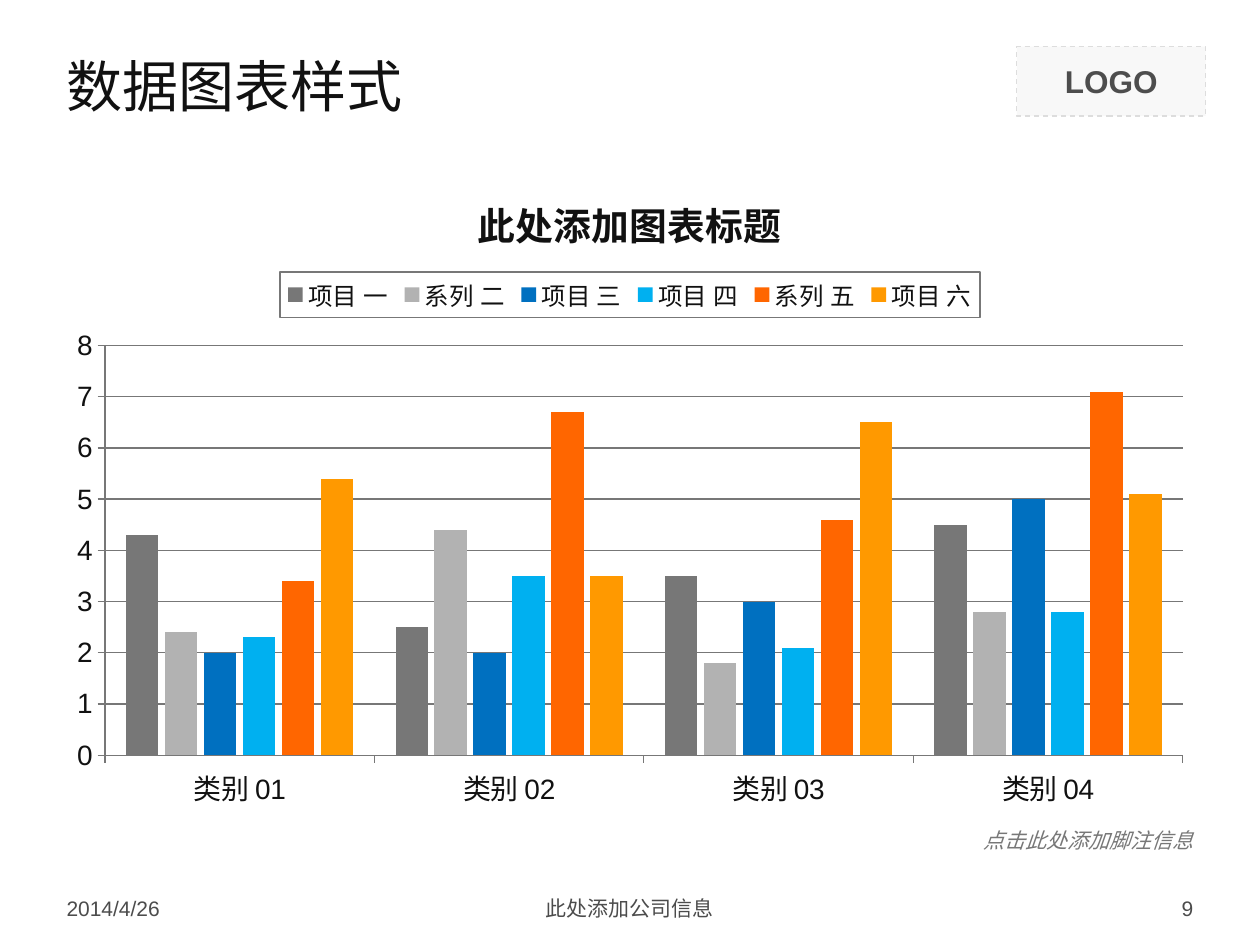
from dataclasses import dataclass

from lxml import etree
from pptx import Presentation
from pptx.chart.data import CategoryChartData
from pptx.dml.color import RGBColor
from pptx.enum.chart import XL_CHART_TYPE, XL_LEGEND_POSITION, XL_TICK_MARK
from pptx.enum.dml import MSO_LINE
from pptx.enum.shapes import MSO_SHAPE
from pptx.enum.text import MSO_ANCHOR, MSO_AUTO_SIZE, PP_ALIGN
from pptx.oxml import parse_xml
from pptx.oxml.ns import nsdecls, qn
from pptx.util import Inches, Pt

LEFT, CENTER, RIGHT = PP_ALIGN.LEFT, PP_ALIGN.CENTER, PP_ALIGN.RIGHT
TOP, MIDDLE = MSO_ANCHOR.TOP, MSO_ANCHOR.MIDDLE
COLUMNS = XL_CHART_TYPE.COLUMN_CLUSTERED
LEGEND_TOP = XL_LEGEND_POSITION.TOP
TICK_OUT = XL_TICK_MARK.OUTSIDE
TICK_NONE = XL_TICK_MARK.NONE
RECTANGLE = MSO_SHAPE.RECTANGLE
DASH = MSO_LINE.DASH
GROW, FIXED = MSO_AUTO_SIZE.SHAPE_TO_FIT_TEXT, MSO_AUTO_SIZE.NONE

GRID_COLUMNS, GRID_ROWS = 100, 75
MARGIN = 4.3
CONTENT = GRID_COLUMNS - 2 * MARGIN


@dataclass(frozen=True)
class Theme:
    ink: str = "111111"
    rule: str = "777777"
    footer: str = "4C4C4C"
    badge_text: str = "4D4D4D"
    badge_fill: str = "F8F8F8"
    badge_line: str = "DDDDDD"
    series: tuple = ("777777", "B2B2B2", "0070C0", "00B0F0", "FF6600", "FF9900")
    heading_font: str = "Montserrat"
    body_font: str = "Arial"
    heading: float = 32
    chart_title: float = 21.6
    chart: float = 18
    axis: float = 16
    legend: float = 14
    small: float = 12
    hairline: float = 0.75


def rgb(value):
    return RGBColor.from_string(value)


def style_font(font, size, color, face, bold=False, italic=False):
    font.size, font.name = Pt(size), face
    font.bold, font.italic = bold, italic
    font.color.rgb = rgb(color)


def write(frame, text, align=LEFT, anchor=MIDDLE, wrap=True, fit=FIXED, **font):
    frame.auto_size = fit
    frame.word_wrap = wrap
    frame.vertical_anchor = anchor
    paragraph = frame.paragraphs[0]
    paragraph.alignment = align
    run = paragraph.add_run()
    run.text = text
    style_font(run.font, **font)


class Page:
    def __init__(self, deck, theme):
        self.theme = theme
        self.cell_width = deck.slide_width / GRID_COLUMNS
        self.cell_height = deck.slide_height / GRID_ROWS
        self.slide = deck.slides.add_slide(deck.slide_layouts[5])

    def area(self, column, row, columns, rows):
        return (int(column * self.cell_width), int(row * self.cell_height),
                int(columns * self.cell_width), int(rows * self.cell_height))

    def title(self, text, *cells):
        heading = self.slide.shapes.title
        heading.left, heading.top, heading.width, heading.height = self.area(*cells)
        write(heading.text_frame, text, size=self.theme.heading,
              color=self.theme.ink, face=self.theme.heading_font)

    def badge(self, text, *cells):
        theme = self.theme
        badge = self.slide.shapes.add_shape(RECTANGLE, *self.area(*cells))
        badge.shadow.inherit = False
        badge.fill.solid()
        badge.fill.fore_color.rgb = rgb(theme.badge_fill)
        badge.line.color.rgb = rgb(theme.badge_line)
        badge.line.width = Pt(theme.hairline)
        badge.line.dash_style = DASH
        write(badge.text_frame, text, align=CENTER, size=theme.chart,
              color=theme.badge_text, face=theme.body_font, bold=True)

    def label(self, text, *cells, color, **style):
        box = self.slide.shapes.add_textbox(*self.area(*cells))
        write(box.text_frame, text, size=self.theme.small, color=color,
              face=self.theme.body_font, **style)

    def rule(self, line):
        line.color.rgb = rgb(self.theme.rule)
        line.width = Pt(self.theme.hairline)

    def axis(self, axis):
        theme = self.theme
        axis.major_tick_mark, axis.minor_tick_mark = TICK_OUT, TICK_NONE
        self.rule(axis.format.line)
        style_font(axis.tick_labels.font, theme.axis, theme.ink, theme.body_font)

    def legend(self, chart):
        theme = self.theme
        chart.has_legend = True
        legend = chart.legend
        legend.position = LEGEND_TOP
        legend.include_in_layout = False
        style_font(legend.font, theme.legend, theme.ink, theme.body_font)
        border = parse_xml(f'<c:spPr {nsdecls("c", "a")}/>')
        line = etree.SubElement(border, qn("a:ln"), w=str(Pt(theme.hairline)))
        fill = etree.SubElement(line, qn("a:solidFill"))
        etree.SubElement(fill, qn("a:srgbClr"), val=theme.rule)
        chart.element.find(".//" + qn("c:legend")).find(qn("c:txPr")).addprevious(border)

    def column_chart(self, heading, categories, results, *cells):
        theme = self.theme
        data = CategoryChartData()
        data.categories = categories
        for name, values in results.items():
            data.add_series(name, values)
        chart = self.slide.shapes.add_chart(COLUMNS, *self.area(*cells), data).chart
        style_font(chart.font, theme.chart, theme.ink, theme.body_font)
        chart.has_title = True
        write(chart.chart_title.text_frame, heading, align=CENTER,
              size=theme.chart_title, color=theme.ink, face=theme.body_font, bold=True)
        chart.chart_title.include_in_layout = False
        self.legend(chart)
        self.axis(chart.category_axis)
        scale = chart.value_axis
        self.axis(scale)
        scale.minimum_scale, scale.maximum_scale, scale.major_unit = 0, 8, 1
        scale.has_major_gridlines = True
        self.rule(scale.major_gridlines.format.line)
        plot = chart.plots[0]
        plot.gap_width, plot.overlap, plot.vary_by_categories = 130, -20, False
        for series, color in zip(plot.series, theme.series):
            series.format.fill.solid()
            series.format.fill.fore_color.rgb = rgb(color)


def main():
    deck = Presentation()
    deck.slide_width, deck.slide_height = Inches(10), Inches(7.5)
    theme = Theme()
    page = Page(deck, theme)
    right = GRID_COLUMNS - MARGIN

    page.badge("LOGO", right - 15, 3.7, 15, 5.5)
    page.title("数据图表样式", MARGIN, 2.8, CONTENT, 7.9)
    page.column_chart(
        "此处添加图表标题",
        [f"类别 {number:02}" for number in range(1, 5)],
        {
            "项目 一": (4.3, 2.5, 3.5, 4.5),
            "系列 二": (2.4, 4.4, 1.8, 2.8),
            "项目 三": (2, 2, 3, 5),
            "项目 四": (2.3, 3.5, 2.1, 2.8),
            "系列 五": (3.4, 6.7, 4.6, 7.1),
            "项目 六": (5.4, 3.5, 6.5, 5.1),
        },
        MARGIN, 13.1, CONTENT, 52)

    side, middle = 23.3, 31.7
    footers = (
        ("2014/4/26", MARGIN, side, LEFT),
        ("此处添加公司信息", (GRID_COLUMNS - middle) / 2, middle, CENTER),
        ("9", right - side, side, RIGHT),
    )
    for text, column, columns, align in footers:
        page.label(text, column, 70.6, columns, 2.9, color=theme.footer, align=align)
    page.label("点击此处添加脚注信息", right - 18.8, 65.2, 18.8, 3, color=theme.rule,
               align=RIGHT, anchor=TOP, wrap=False, fit=GROW, italic=True)
    deck.save("out.pptx")


if __name__ == "__main__":
    main()
